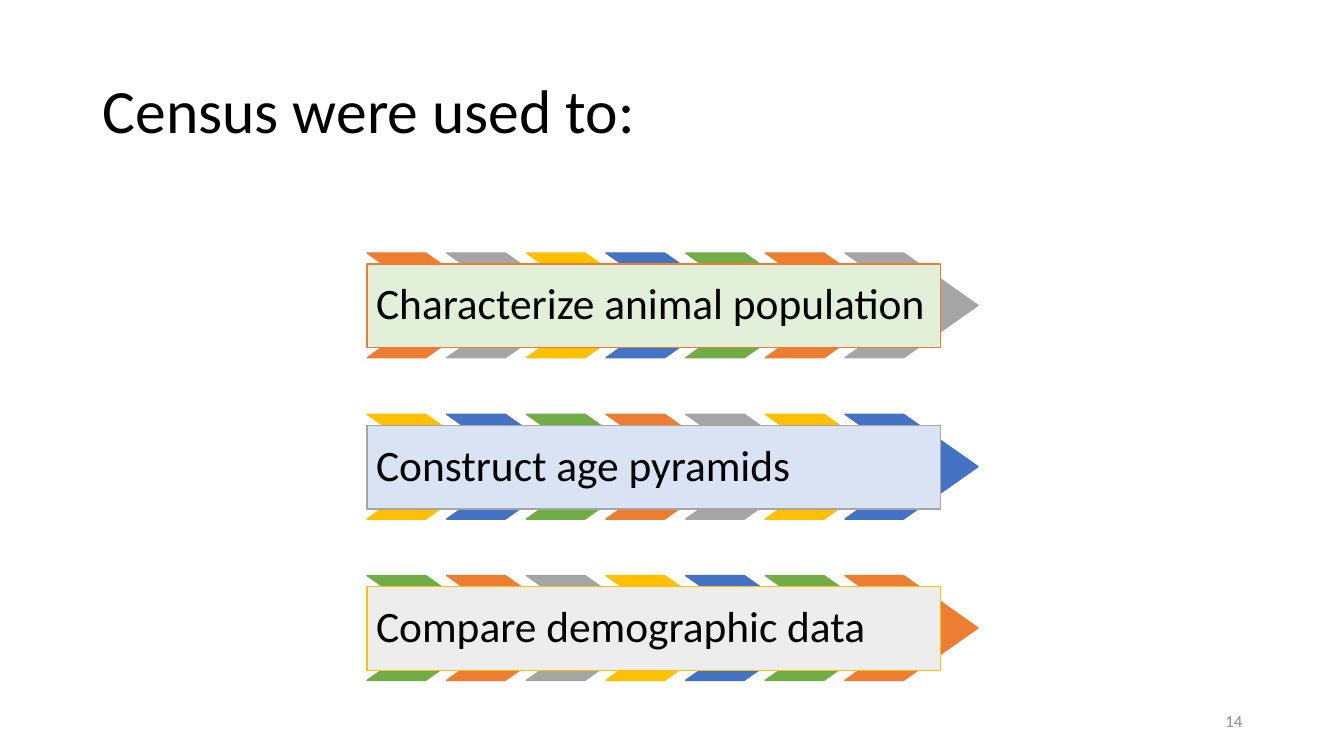
from itertools import cycle

from pptx import Presentation
from pptx.dml.color import RGBColor
from pptx.enum.shapes import MSO_SHAPE
from pptx.enum.text import MSO_ANCHOR, PP_ALIGN
from pptx.util import Inches, Pt

FONT = "Calibri"
ACCENTS = ["ED7D31", "A5A5A5", "FFC000", "4472C4", "70AD47"]
USES = [
    ("Characterize animal population", "E2F0D9"),
    ("Construct age pyramids", "DAE3F3"),
    ("Compare demographic data", "EDEDED"),
]
LEFT, FIRST_TOP, ROW_STEP = 3.64, 2.51, 1.6
CHEVRON_COUNT, CHEVRON_STEP = 7, 0.79


def color(hex_code):
    """Turn a hex string into a colour."""
    return RGBColor.from_string(hex_code)


def write_text(shape, text, size, hex_code="000000", align=PP_ALIGN.LEFT, spacing=0.9):
    """Write one vertically centred line of text into a shape."""
    frame = shape.text_frame
    frame.word_wrap = True
    frame.vertical_anchor = MSO_ANCHOR.MIDDLE
    para = frame.paragraphs[0]
    para.alignment = align
    para.line_spacing = spacing
    span = para.add_run()
    span.text = text
    span.font.name = FONT
    span.font.size = Pt(size)
    span.font.color.rgb = color(hex_code)


def add_text(page, left, top, width, height, text, size, **style):
    """Add a text box."""
    box = page.shapes.add_textbox(Inches(left), Inches(top), Inches(width), Inches(height))
    write_text(box, text, size, **style)


def add_block(page, kind, left, top, width, height, fill, line):
    """Add a filled and outlined preset shape."""
    block = page.shapes.add_shape(
        kind, Inches(left), Inches(top), Inches(width), Inches(height))
    block.shadow.inherit = False
    block.fill.solid()
    block.fill.fore_color.rgb = color(fill)
    block.line.color.rgb = color(line)
    block.line.width = Pt(1)
    return block


def add_chevrons(page, top, accents):
    """Add a row of chevrons, taking the next accent for each."""
    for column in range(CHEVRON_COUNT):
        accent = next(accents)
        chevron = add_block(page, MSO_SHAPE.CHEVRON, LEFT + column * CHEVRON_STEP, top,
                            1.32, 1.04, accent, accent)
        chevron.adjustments[0] = 0.71


def add_label(page, top, text, fill, line):
    """Add the labelled bar that lies over a chevron row."""
    label = add_block(page, MSO_SHAPE.RECTANGLE, LEFT, top, 5.69, 0.83, fill, line)
    frame = label.text_frame
    frame.margin_left = frame.margin_right = Inches(0.09)
    frame.margin_top = frame.margin_bottom = Inches(0.09)
    write_text(label, text, 31)


def main():
    """Build the slide on the uses of the census."""
    deck = Presentation()
    deck.slide_width, deck.slide_height = Inches(13.33), Inches(7.5)
    page = deck.slides.add_slide(deck.slide_layouts[6])
    add_text(page, 0.92, 0.4, 11.5, 1.45, "Census were used to:", 44)
    accents = cycle(ACCENTS)
    for row, (text, fill) in enumerate(USES):
        top = FIRST_TOP + row * ROW_STEP
        add_chevrons(page, top, accents)
        add_label(page, top + 0.11, text, fill, ACCENTS[row])
    add_text(page, 9.42, 6.95, 3, 0.4, "14", 12, hex_code="8C8C8C",
             align=PP_ALIGN.RIGHT, spacing=1.0)
    deck.save("out.pptx")


if __name__ == "__main__":
    main()
